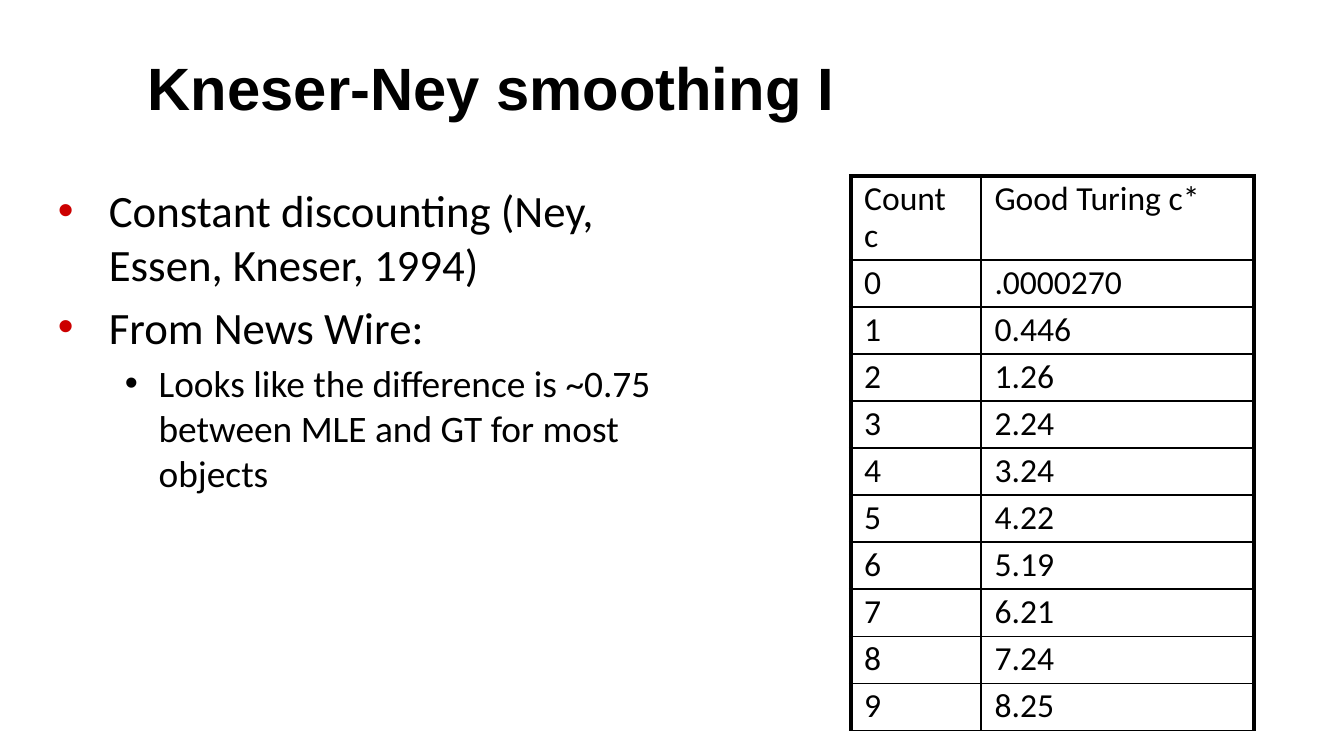
from lxml.etree import SubElement
from pptx import Presentation
from pptx.dml.color import RGBColor
from pptx.enum.text import MSO_ANCHOR, MSO_AUTO_SIZE, PP_ALIGN
from pptx.oxml.ns import qn
from pptx.util import Inches, Pt

# Content
TITLE = "Kneser-Ney smoothing I"
POINTS = [
    (0, "Constant discounting (Ney, Essen, Kneser, 1994)"),
    (0, "From News Wire:"),
    (1, "Looks like the difference is ~0.75 between MLE and GT for most objects"),
]
HEAD = ("Count c", "Good Turing c*")
TURING = (".0000270", "0.446", "1.26", "2.24", "3.24",
          "4.22", "5.19", "6.21", "7.24", "8.25")
ROWS = [HEAD] + [(str(n), val) for n, val in enumerate(TURING)]

# Theme
THEME = {
    "ink": "000000", "red": "CC0000",
    "head": "Arial", "text": "Calibri",
    "title": 32, "levels": (24, 20), "cell": 18,
    "thick": 2.25, "thin": 1,
}
# Left margin, hanging indent and bullet colour of each list level
BULLETS = [(0.38, -0.38, THEME["red"]), (0.75, -0.25, THEME["ink"])]
COLS = (0.97, 2.03)
HEAD_H, ROW_H = 0.42, 0.32


def write(para, text, size, font=THEME["text"], bold=False, before=0, line=1):
    para.alignment = PP_ALIGN.LEFT
    para.space_before = Pt(before)
    para.line_spacing = line
    run = para.add_run()
    run.text = text
    run.font.name, run.font.size, run.font.bold = font, Pt(size), bold
    run.font.color.rgb = RGBColor.from_string(THEME["ink"])


def place(shape, left, top, width, height, anchor):
    shape.left, shape.top = Inches(left), Inches(top)
    shape.width, shape.height = Inches(width), Inches(height)
    frame = shape.text_frame
    frame.auto_size = MSO_AUTO_SIZE.NONE
    frame.word_wrap = True
    frame.vertical_anchor = anchor
    return frame


def bullet(para, level):
    left, hang, color = BULLETS[level]
    para.level = level
    props = para._p.get_or_add_pPr()
    props.set("marL", str(Inches(left)))
    props.set("indent", str(Inches(hang)))
    tint = SubElement(props, qn("a:buClr"))
    SubElement(tint, qn("a:srgbClr"), val=color)
    SubElement(props, qn("a:buFont"), typeface="Arial")
    SubElement(props, qn("a:buChar"), char="•")


def border(cell, side, width):
    props = cell._tc.get_or_add_tcPr()
    line = SubElement(props, qn("a:ln" + side), w=str(Pt(width)))
    fill = SubElement(line, qn("a:solidFill"))
    SubElement(fill, qn("a:srgbClr"), val=THEME["ink"])


# Slide in 16:9
deck = Presentation()
deck.slide_width, deck.slide_height = Inches(10), Inches(10) * 9 // 16
slide = deck.slides.add_slide(deck.slide_layouts[1])

# Title
frame = place(slide.shapes.title, 1, 0.15, 8, 0.81, MSO_ANCHOR.BOTTOM)
write(frame.paragraphs[0], TITLE, THEME["title"], font=THEME["head"], bold=True)

# Bullet list
frame = place(slide.placeholders[1], 0.33, 1.31, 5.08, 4.23, MSO_ANCHOR.TOP)
for i, (level, text) in enumerate(POINTS):
    para = frame.add_paragraph() if i else frame.paragraphs[0]
    bullet(para, level)
    size = THEME["levels"][level]
    write(para, text, size, before=0.2 * size if i else 0)

# Table of counts
height = HEAD_H + ROW_H * len(TURING)
table = slide.shapes.add_table(
    len(ROWS), len(COLS), Inches(6.33), Inches(1.31),
    Inches(sum(COLS)), Inches(height)).table
table.first_row = table.horz_banding = False
for col, width in zip(table.columns, COLS):
    col.width = Inches(width)
for r, row in enumerate(ROWS):
    table.rows[r].height = Inches(ROW_H if r else HEAD_H)
    for c, text in enumerate(row):
        cell = table.cell(r, c)
        cell.margin_left = cell.margin_right = Inches(0.1)
        cell.margin_top = cell.margin_bottom = Pt(2.7)
        outer = {"L": c == 0, "R": c == len(COLS) - 1, "T": r == 0, "B": False}
        for side, edge in outer.items():
            border(cell, side, THEME["thick" if edge else "thin"])
        cell.fill.background()
        write(cell.text_frame.paragraphs[0], text, THEME["cell"], line=0.9)

deck.save("out.pptx")
